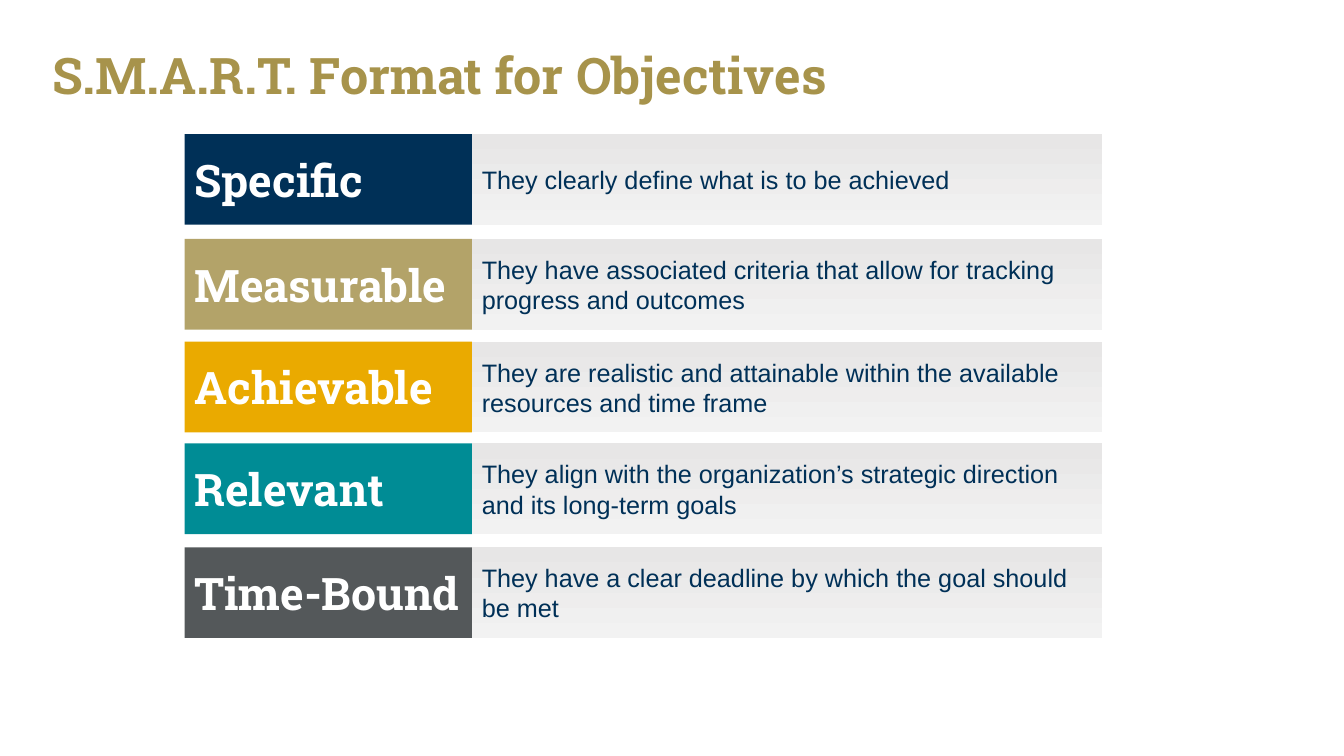
from dataclasses import dataclass

import pptx
import pptx.dml.color
import pptx.enum.shapes
import pptx.enum.text
import pptx.shapes.autoshape
import pptx.shapes.group
import pptx.slide
import pptx.util


@dataclass(frozen=True)
class Style:
    font: str
    size: int
    color: str
    bold: bool = False


@dataclass(frozen=True)
class Theme:
    title: Style = Style("Roboto Slab", 36, "A7934B", True)
    label: Style = Style("Roboto Slab", 32, "FFFFFF", True)
    body: Style = Style("Arial", 18, "003057")
    fade: tuple[str, str] = ("F2F2F2", "E7E6E6")
    navy: str = "003057"
    gold: str = "B3A369"
    amber: str = "EAAA00"
    teal: str = "008C95"
    slate: str = "54585A"


@dataclass(frozen=True)
class Box:
    left: float
    top: float
    width: float
    height: float

    def inches(self) -> list[int]:
        return [pptx.util.Inches(n) for n in (self.left, self.top, self.width, self.height)]


@dataclass(frozen=True)
class Grid:
    left: float
    columns: tuple[float, ...]
    rows: tuple[float, ...]
    height: float

    def cell(self, column: int, row: int) -> Box:
        left = self.left + sum(self.columns[:column])
        return Box(left, self.rows[row], self.columns[column], self.height)


@dataclass(frozen=True)
class Goal:
    name: str
    text: str
    color: str


THEME = Theme()
WIDTH, HEIGHT = 13.33, 7.5
TITLE = Box(0.42, 0.22, 12.5, 1.11)
GRID = Grid(1.83, (2.85, 6.25), (1.33, 2.37, 3.39, 4.4, 5.43), 0.9)
GOALS = (
    Goal("Specific", "They clearly define what is to be achieved", THEME.navy),
    Goal(
        "Measurable",
        "They have associated criteria that allow for tracking progress and outcomes",
        THEME.gold,
    ),
    Goal(
        "Achievable",
        "They are realistic and attainable within the available resources and time frame",
        THEME.amber,
    ),
    Goal(
        "Relevant",
        "They align with the organization’s strategic direction and its long-term goals",
        THEME.teal,
    ),
    Goal("Time-Bound", "They have a clear deadline by which the goal should be met", THEME.slate),
)


def tint(code: str) -> pptx.dml.color.RGBColor:
    return pptx.dml.color.RGBColor.from_string(code)


def write(shape: pptx.shapes.autoshape.Shape, text: str, style: Style) -> None:
    frame = shape.text_frame
    frame.word_wrap = True
    frame.vertical_anchor = pptx.enum.text.MSO_ANCHOR.MIDDLE
    frame.text = text
    line = frame.paragraphs[0]
    line.alignment = pptx.enum.text.PP_ALIGN.LEFT
    font = line.runs[0].font
    font.name = style.font
    font.size = pptx.util.Pt(style.size)
    font.bold = style.bold
    font.color.rgb = tint(style.color)


def block(
    group: pptx.shapes.group.GroupShape, box: Box, text: str, style: Style
) -> pptx.shapes.autoshape.Shape:
    shape = group.shapes.add_shape(pptx.enum.shapes.MSO_SHAPE.RECTANGLE, *box.inches())
    shape.shadow.inherit = False
    shape.line.fill.background()
    write(shape, text, style)
    return shape


def draw(slide: pptx.slide.Slide, goal: Goal, row: int) -> None:
    group = slide.shapes.add_group_shape()
    panel = block(group, GRID.cell(1, row), goal.text, THEME.body)
    panel.fill.gradient()
    panel.fill.gradient_angle = 90
    for stop, code in zip(panel.fill.gradient_stops, THEME.fade):
        stop.color.rgb = tint(code)
    label = block(group, GRID.cell(0, row), goal.name, THEME.label)
    label.fill.solid()
    label.fill.fore_color.rgb = tint(goal.color)


def main() -> None:
    deck = pptx.Presentation()
    deck.slide_width = pptx.util.Inches(WIDTH)
    deck.slide_height = pptx.util.Inches(HEIGHT)
    slide = deck.slides.add_slide(deck.slide_layouts[6])
    title = slide.shapes.add_textbox(*TITLE.inches())
    write(title, "S.M.A.R.T. Format for Objectives", THEME.title)
    line = title.text_frame.paragraphs[0]
    line.line_spacing = 0.9
    line.space_after = pptx.util.Pt(6)
    for row, goal in enumerate(GOALS):
        draw(slide, goal, row)
    deck.save("out.pptx")


if __name__ == "__main__":
    main()
